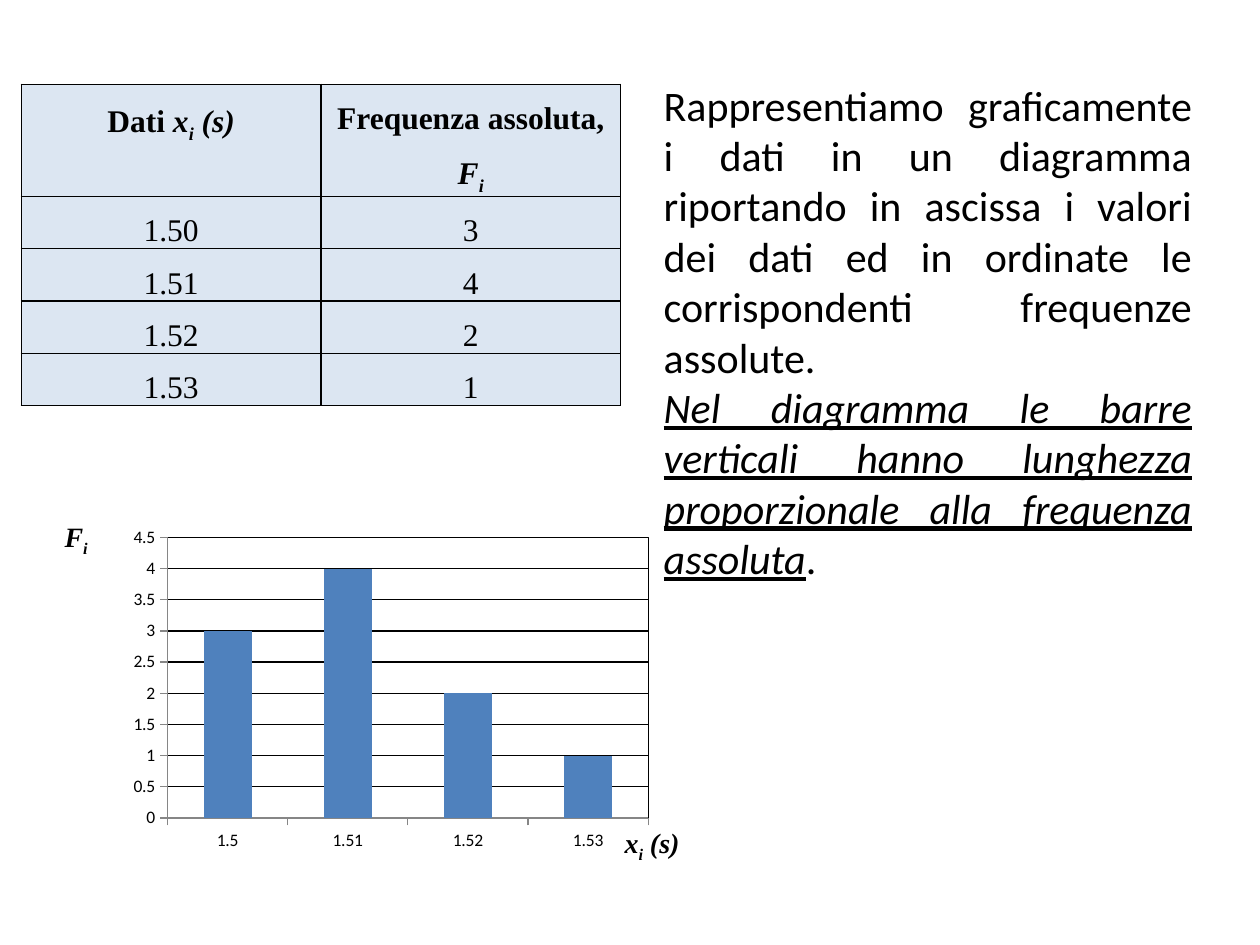
from dataclasses import dataclass

from lxml.etree import SubElement
from pptx import Presentation
from pptx.chart.data import CategoryChartData
from pptx.dml.color import RGBColor
from pptx.enum.chart import XL_CHART_TYPE as ChartType, XL_TICK_MARK as Tick
from pptx.enum.text import MSO_AUTO_SIZE as AutoSize, PP_ALIGN as Align
from pptx.oxml import parse_xml
from pptx.oxml.ns import nsdecls, qn
from pptx.util import Cm, Pt

BLACK, GREY, BAR_BLUE, CELL_BLUE = "000000", "868686", "4F81BD", "DCE6F2"
SERIF, SANS = "Times New Roman", "Calibri"


@dataclass(frozen=True)
class Span:
    text: str
    bold: bool = False
    italic: bool = False
    underline: bool = False
    subscript: bool = False


@dataclass(frozen=True)
class Box:
    """Place on the slide, in centimetres."""
    left: float
    top: float
    width: float
    height: float

    def lengths(self) -> tuple:
        return Cm(self.left), Cm(self.top), Cm(self.width), Cm(self.height)


@dataclass(frozen=True)
class AxisLabel:
    spans: list[Span]
    box: Box


def colour(value: str) -> RGBColor:
    return RGBColor.from_string(value)


def write(frame, paragraphs: list[list[Span]], *, size: float, font: str,
          align: Align, spacing: float | None = None) -> None:
    for index, spans in enumerate(paragraphs):
        paragraph = frame.paragraphs[0] if index == 0 else frame.add_paragraph()
        paragraph.alignment = align
        if spacing:
            paragraph.line_spacing = spacing
        for span in spans:
            run = paragraph.add_run()
            run.text = span.text
            run.font.size = Pt(size)
            run.font.name = font
            run.font.color.rgb = colour(BLACK)
            run.font.bold = span.bold
            run.font.italic = span.italic
            run.font.underline = span.underline
            if span.subscript:
                run._r.get_or_add_rPr().set("baseline", "-25000")


def add_text(slide, box: Box, paragraphs: list[list[Span]], *, wrap: bool = True,
             **text_format) -> None:
    frame = slide.shapes.add_textbox(*box.lengths()).text_frame
    frame.word_wrap = wrap
    frame.auto_size = AutoSize.SHAPE_TO_FIT_TEXT
    write(frame, paragraphs, **text_format)


def add_borders(cell) -> None:
    properties = cell._tc.get_or_add_tcPr()
    for index, side in enumerate(("lnL", "lnR", "lnT", "lnB")):
        properties.insert(index, parse_xml(
            f'<a:{side} {nsdecls("a")} w="{Pt(1)}"><a:solidFill>'
            f'<a:srgbClr val="{BLACK}"/></a:solidFill></a:{side}>'))


def add_frequency_table(slide, box: Box, rows: list[list[list[Span]]],
                        header_height: float) -> None:
    table = slide.shapes.add_table(len(rows), len(rows[0]), *box.lengths()).table
    row_height = (box.height - header_height) / (len(rows) - 1)
    for index, spans_by_column in enumerate(rows):
        table.rows[index].height = Cm(row_height if index else header_height)
        for column, spans in enumerate(spans_by_column):
            cell = table.cell(index, column)
            cell.margin_left = cell.margin_right = Cm(0.18)
            cell.margin_top = cell.margin_bottom = 0
            cell.fill.solid()
            cell.fill.fore_color.rgb = colour(CELL_BLUE)
            add_borders(cell)
            write(cell.text_frame, [spans], size=18, font=SERIF,
                  align=Align.CENTER, spacing=1.5)


def set_plot_area(chart, **layout: float) -> None:
    """Fix the inner plot area and outline it."""
    area = chart._chartSpace.find(f".//{qn('c:plotArea')}")
    for old in area.findall(qn("c:layout")):
        area.remove(old)
    holder = parse_xml(f'<c:layout {nsdecls("c")}/>')
    manual = SubElement(holder, qn("c:manualLayout"))
    settings = {"layoutTarget": "inner", "xMode": "edge", "yMode": "edge", **layout}
    for name, value in settings.items():
        SubElement(manual, qn(f"c:{name}")).set("val", str(value))
    area.insert(0, holder)
    area.append(parse_xml(
        f'<c:spPr {nsdecls("c", "a")}><a:noFill/><a:ln w="{Pt(0.75)}"><a:solidFill>'
        f'<a:srgbClr val="{BLACK}"/></a:solidFill></a:ln></c:spPr>'))


def add_frequency_chart(slide, box: Box, frequencies: dict[str, int]) -> None:
    data = CategoryChartData()
    data.categories = [f"{float(value):g}" for value in frequencies]
    data.add_series("Series 1", list(frequencies.values()))
    chart = slide.shapes.add_chart(
        ChartType.COLUMN_CLUSTERED, *box.lengths(), data).chart
    chart.has_legend = chart.has_title = False
    chart.font.size = Pt(10)
    chart.font.name = SANS
    chart.font.color.rgb = colour(BLACK)

    plot = chart.plots[0]
    plot.gap_width = 150
    plot.vary_by_categories = False
    bars = plot.series[0].format.fill
    bars.solid()
    bars.fore_color.rgb = colour(BAR_BLUE)

    for axis in (chart.category_axis, chart.value_axis):
        axis.major_tick_mark = Tick.OUTSIDE
        axis.minor_tick_mark = Tick.NONE
        axis.format.line.color.rgb = colour(GREY)
    scale = chart.value_axis
    scale.minimum_scale, scale.maximum_scale, scale.major_unit = 0, 4.5, 0.5
    scale.has_major_gridlines = True
    scale.major_gridlines.format.line.color.rgb = colour(BLACK)
    scale.major_gridlines.format.line.width = Pt(0.75)
    set_plot_area(chart, x=0.14, y=0.09, w=0.86, h=0.79)


def symbol(letter: str) -> list[Span]:
    return [Span(letter, bold=True, italic=True),
            Span("i", bold=True, italic=True, subscript=True)]


def main() -> None:
    presentation = Presentation()
    presentation.slide_width, presentation.slide_height = Cm(25.4), Cm(19.05)
    slide = presentation.slides.add_slide(presentation.slide_layouts[6])

    frequencies = {"1.50": 3, "1.51": 4, "1.52": 2, "1.53": 1}
    seconds = Span(" (s)", bold=True, italic=True)
    header = [[Span("Dati ", bold=True), *symbol("x"), seconds],
              [Span("Frequenza assoluta, ", bold=True), *symbol("F")]]
    body = [[[Span(value)], [Span(str(count))]] for value, count in frequencies.items()]
    add_frequency_table(slide, Box(0.43, 1.7, 12.08, 6.48), [header, *body],
                        header_height=2.26)

    explanation = [
        [Span("Rappresentiamo graficamente i dati in un diagramma riportando in "
              "ascissa i valori dei dati ed in ordinate le corrispondenti "
              "frequenze assolute. ")],
        [Span("Nel diagramma le barre verticali hanno lunghezza proporzionale "
              "alla frequenza assoluta", italic=True, underline=True), Span(".")],
    ]
    add_text(slide, Box(13.13, 1.47, 11.15, 10.52), explanation,
             size=24, font=SANS, align=Align.JUSTIFY)

    add_frequency_chart(slide, Box(1.8, 10.19, 11.28, 7.16), frequencies)
    for label in (AxisLabel([*symbol("x"), seconds], Box(12.32, 16.13, 1.65, 1.17)),
                  AxisLabel(symbol("F"), Box(1.04, 9.96, 0.99, 1.17))):
        add_text(slide, label.box, [label.spans], wrap=False,
                 size=16, font=SERIF, align=Align.CENTER, spacing=1.5)

    presentation.save("out.pptx")


if __name__ == "__main__":
    main()
